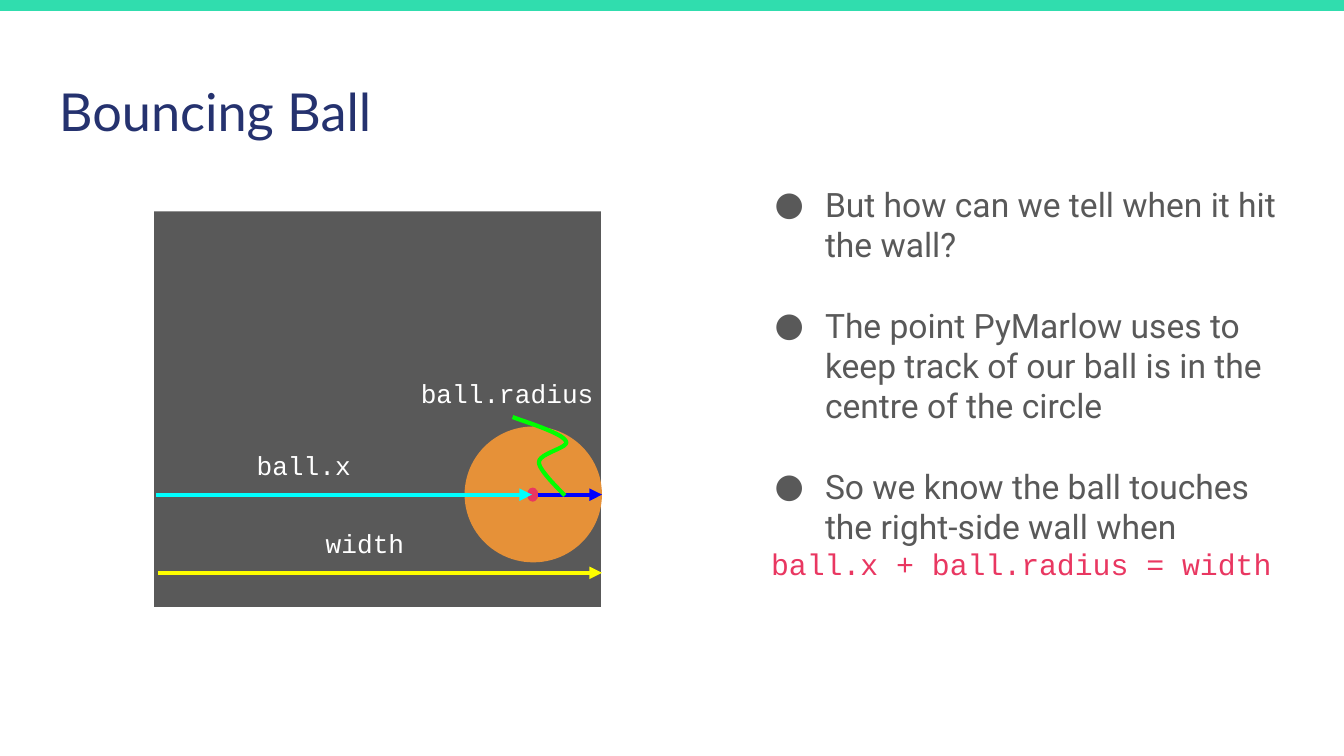
"""Build the Bouncing Ball slide: a labelled wall diagram beside three bullet points."""
from dataclasses import dataclass

from lxml import etree
from pptx import Presentation
from pptx.dml.color import RGBColor
from pptx.enum.shapes import MSO_CONNECTOR, MSO_SHAPE
from pptx.enum.text import PP_ALIGN
from pptx.oxml.ns import qn
from pptx.util import Pt

RECTANGLE, OVAL = MSO_SHAPE.RECTANGLE, MSO_SHAPE.OVAL
STRAIGHT = MSO_CONNECTOR.STRAIGHT
CENTER, LEFT = PP_ALIGN.CENTER, PP_ALIGN.LEFT


@dataclass(frozen=True)
class Theme:
    band: str = "30DDAE"
    gray: str = "595959"
    ball: str = "E69138"
    navy: str = "25326F"
    pink: str = "E93761"
    white: str = "FFFFFF"
    radius: str = "0000FF"
    position: str = "00FFFF"
    width: str = "FFFF00"
    pointer: str = "00FF00"
    title_size: int = 28
    body_size: int = 18
    code_size: int = 16
    label_size: int = 14
    stroke: float = 2.25
    title_font: str = "Lato"
    body_font: str = "Roboto"
    code_font: str = "Courier New"


theme = Theme()
prs = Presentation()
prs.slide_width, prs.slide_height = Pt(720), Pt(405)
slide = prs.slides.add_slide(prs.slide_layouts[6])
shapes = slide.shapes


def add_text_box(left, top, width, height, side_margin=7.2):
    frame = shapes.add_textbox(Pt(left), Pt(top), Pt(width), Pt(height)).text_frame
    frame.word_wrap = True
    frame.margin_left = frame.margin_right = Pt(side_margin)
    frame.margin_top = frame.margin_bottom = Pt(7.2)
    return frame


def write(paragraph, text, font, size, color, align=LEFT):
    paragraph.text = text
    paragraph.alignment = align
    paragraph.font.name = font
    paragraph.font.size = Pt(size)
    paragraph.font.color.rgb = RGBColor.from_string(color)


for kind, color, left, top, width, height in (
    (RECTANGLE, theme.band, -0.5, 0, 721, 5.9),
    (RECTANGLE, theme.gray, 82.6, 113.2, 239.3, 212),
    (OVAL, theme.ball, 248.9, 228.5, 73.6, 72.8),
    (OVAL, theme.pink, 282.4, 261.2, 6, 7.6),
):
    part = shapes.add_shape(kind, Pt(left), Pt(top), Pt(width), Pt(height))
    part.shadow.inherit = False
    part.fill.solid()
    part.fill.fore_color.rgb = RGBColor.from_string(color)
    part.line.fill.background()

for color, start, end, y in (
    (theme.radius, 288, 322.5, 265),
    (theme.position, 83.5, 285, 265),
    (theme.width, 84.7, 322.5, 306.9),
):
    arrow = shapes.add_connector(STRAIGHT, Pt(start), Pt(y), Pt(end), Pt(y))
    arrow.line.color.rgb = RGBColor.from_string(color)
    arrow.line.width = Pt(theme.stroke)
    outline = arrow._element.spPr.find(qn("a:ln"))
    etree.SubElement(outline, qn("a:tailEnd"), type="triangle")
    etree.SubElement(arrow._element.spPr, qn("a:effectLst"))

pointer_curves = (
    ((274.6, 223.4), (279.4, 225.4), (301, 231.8), (303.1, 236.2)),
    ((303.1, 236.2), (306, 239.8), (288.7, 242.6), (288.7, 247.7)),
    ((288.7, 247.7), (288.7, 252), (300.2, 262.8), (302.6, 265.5)),
)
steps = 12
pointer_points = []
for curve in pointer_curves:
    for step in range(1, steps + 1):
        t = step / steps
        weights = ((1 - t) ** 3, 3 * t * (1 - t) ** 2, 3 * t * t * (1 - t), t ** 3)
        pointer_points.append(
            tuple(Pt(sum(w * p[axis] for w, p in zip(weights, curve))) for axis in (0, 1))
        )
start_x, start_y = pointer_curves[0][0]
builder = shapes.build_freeform(Pt(start_x), Pt(start_y))
builder.add_line_segments(pointer_points, close=False)
radius_pointer = builder.convert_to_shape()
radius_pointer.shadow.inherit = False
radius_pointer.fill.background()
radius_pointer.line.color.rgb = RGBColor.from_string(theme.pointer)
radius_pointer.line.width = Pt(theme.stroke)

for label, left, top, width in (
    ("ball.radius", 215.3, 195.1, 113),
    ("ball.x", 130, 233.8, 65.5),
    ("width", 162.8, 275.3, 65.5),
):
    frame = add_text_box(left, top, width, 31.7, side_margin=0)
    write(frame.paragraphs[0], label, theme.code_font, theme.label_size, theme.white, CENTER)

title = add_text_box(24.5, 35.3, 671, 45.4)
write(title.paragraphs[0], "Bouncing Ball", theme.title_font, theme.title_size, theme.navy)

explanation = add_text_box(398.9, 91.4, 296.6, 230.4)
for index, point in enumerate((
    "But how can we tell when it hit the wall?",
    "The point PyMarlow uses to keep track of our ball is in the centre of the circle",
    "So we know the ball touches the right-side wall when",
)):
    paragraph = explanation.add_paragraph() if index else explanation.paragraphs[0]
    write(paragraph, point, theme.body_font, theme.body_size, theme.gray)
    paragraph.space_before = Pt(21.4 if index else 0)
    properties = paragraph._p.get_or_add_pPr()
    properties.set("marL", str(Pt(36)))
    properties.set("indent", str(Pt(-27)))
    run_defaults = properties.find(qn("a:defRPr"))
    run_defaults.addprevious(etree.Element(qn("a:buFont"), typeface=theme.body_font))
    run_defaults.addprevious(etree.Element(qn("a:buChar"), char="●"))
write(explanation.add_paragraph(), "ball.x + ball.radius = width",
      theme.code_font, theme.code_size, theme.pink, CENTER)

prs.save("out.pptx")
